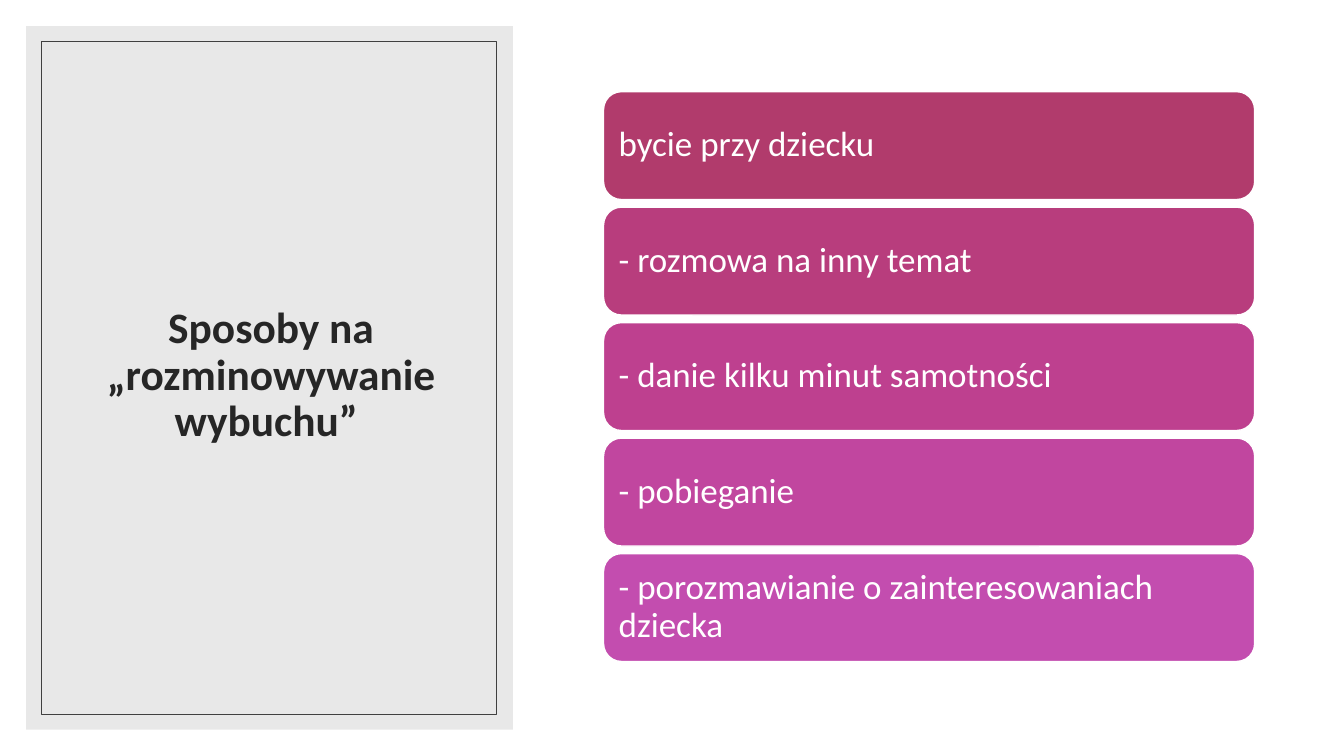
from dataclasses import dataclass

from lxml.etree import SubElement
from pptx import Presentation
from pptx.dml.color import RGBColor
from pptx.enum.shapes import MSO_SHAPE
from pptx.enum.text import MSO_ANCHOR, MSO_AUTO_SIZE, PP_ALIGN
from pptx.oxml.ns import qn
from pptx.util import Cm, Pt


@dataclass(frozen=True)
class Theme:
    """Colours and type sizes of the slide."""
    font: str = "Calibri"
    title_size: int = 31
    item_size: int = 25
    panel: str = "D9D9D9"
    panel_alpha: int = 60
    frame: str = "404040"
    title: str = "262626"
    white: str = "FFFFFF"
    bars: tuple = ("B13B6C", "B83D7D", "BE408F", "C1469F", "C34DAF")


THEME = Theme()
TITLE = "Sposoby na „rozminowywanie wybuchu” "
ITEMS = (
    "bycie przy dziecku ",
    "- rozmowa na inny temat ",
    "- danie kilku minut samotności ",
    "- pobieganie ",
    "- porozmawianie o zainteresowaniach dziecka ",
)
BAR_LEFT, BAR_TOP, BAR_WIDTH, BAR_HEIGHT, BAR_PITCH = 15.21, 2.31, 16.41, 2.72, 2.91


def add_box(slide, kind, box, fill=None, line=None, width=1):
    """Add a shape without shadow, with an optional fill and outline."""
    sp = slide.shapes.add_shape(kind, *map(Cm, box))
    sp.shadow.inherit = False
    if fill:
        sp.fill.solid()
        sp.fill.fore_color.rgb = RGBColor.from_string(fill)
    else:
        sp.fill.background()
    if line:
        sp.line.color.rgb = RGBColor.from_string(line)
        sp.line.width = Pt(width)
    else:
        sp.line.fill.background()
    return sp


def set_alpha(sp, percent):
    """Make a solid fill partly transparent."""
    color = sp.fill._xPr.find(qn("a:solidFill"))[0]
    SubElement(color, qn("a:alpha")).set("val", str(percent * 1000))


def write_text(sp, text, size, color, align, bold=False):
    """Write one vertically centred paragraph into a shape."""
    tf = sp.text_frame
    tf.word_wrap = True
    tf.auto_size = MSO_AUTO_SIZE.NONE
    tf.vertical_anchor = MSO_ANCHOR.MIDDLE
    p = tf.paragraphs[0]
    p.text = text
    p.alignment = align
    p.line_spacing = 0.9
    p.font.name = THEME.font
    p.font.size = Pt(size)
    p.font.bold = bold
    p.font.color.rgb = RGBColor.from_string(color)


def add_title_panel(slide):
    """Build the grey panel, the title on it and the thin frame."""
    panel = add_box(slide, MSO_SHAPE.RECTANGLE, (0.66, 0.66, 12.27, 17.73), THEME.panel)
    set_alpha(panel, THEME.panel_alpha)
    title = slide.shapes.title
    title.left, title.top, title.width, title.height = map(Cm, (1.6, 1.55, 10.46, 15.85))
    write_text(title, TITLE, THEME.title_size, THEME.title, PP_ALIGN.CENTER, bold=True)
    panel._element.addnext(title._element)
    add_box(slide, MSO_SHAPE.RECTANGLE, (1.04, 1.04, 11.46, 16.97), line=THEME.frame, width=0.5)


def add_bar(slide, row, text, fill):
    """Add one rounded bar of the list."""
    box = (BAR_LEFT, BAR_TOP + row * BAR_PITCH, BAR_WIDTH, BAR_HEIGHT)
    sp = add_box(slide, MSO_SHAPE.ROUNDED_RECTANGLE, box, fill, THEME.white)
    write_text(sp, text, THEME.item_size, THEME.white, PP_ALIGN.LEFT)
    tf = sp.text_frame
    tf.margin_left = tf.margin_right = tf.margin_top = tf.margin_bottom = Cm(0.25)


def main():
    """Build and save the slide."""
    prs = Presentation()
    prs.slide_width, prs.slide_height = Cm(33.87), Cm(19.05)
    slide = prs.slides.add_slide(prs.slide_layouts.get_by_name("Title Only"))
    add_title_panel(slide)
    for row, (text, fill) in enumerate(zip(ITEMS, THEME.bars)):
        add_bar(slide, row, text, fill)
    prs.save("out.pptx")


if __name__ == "__main__":
    main()
